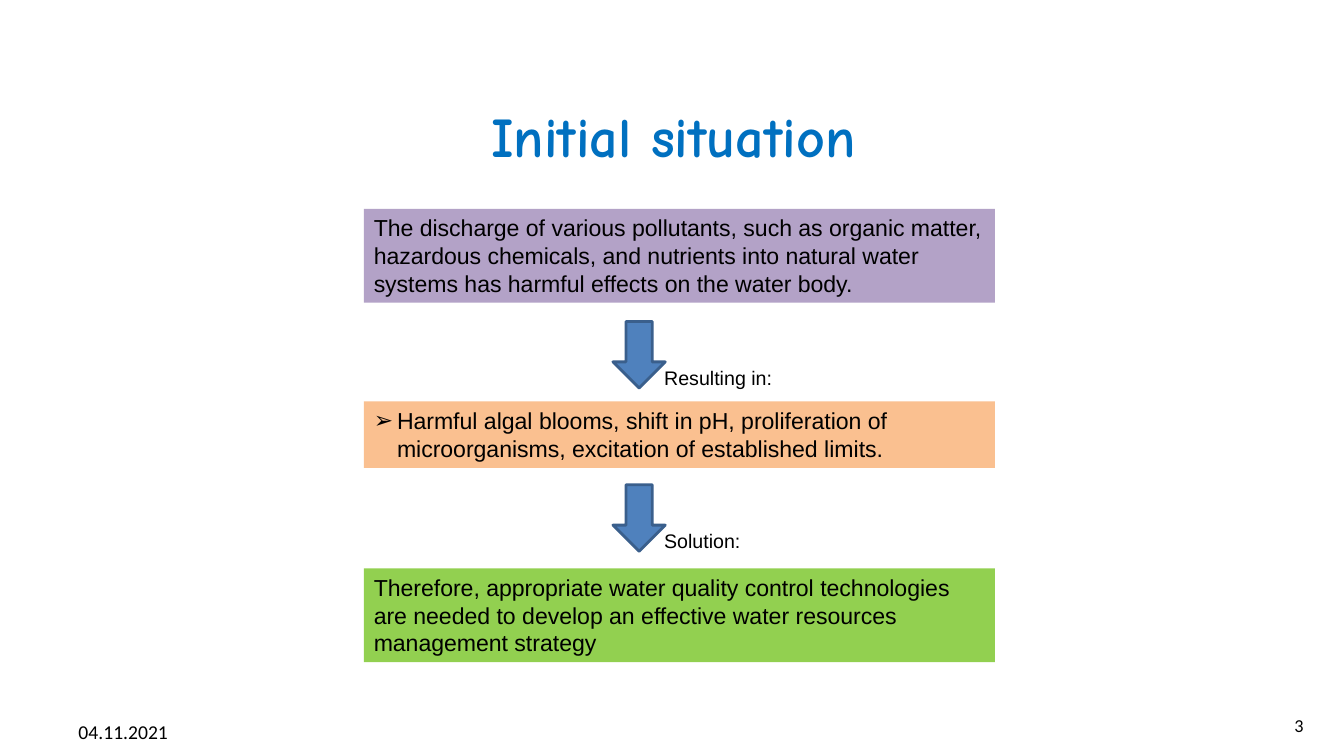
from dataclasses import dataclass

from lxml import etree
from pptx import Presentation
from pptx import util as u
from pptx.dml.color import RGBColor
from pptx.enum import shapes, text
from pptx.oxml import ns


@dataclass(frozen=True)
class Theme:
    black: str = "000000"
    title_blue: str = "0070C0"
    purple: str = "B3A2C7"
    orange: str = "FAC090"
    green: str = "92D050"
    arrow_fill: str = "4F81BD"
    arrow_line: str = "3A5F8C"
    title_size: float = 40
    body_size: float = 16.5
    label_size: float = 14
    number_size: float = 13
    body_font: str = "Arial"
    title_font: str = "Comic Neue"
    footer_font: str = "Calibri"


THEME = Theme()
BOX_LEFT, BOX_WIDTH = 259.9, 450.7
ARROW_LEFT, ARROW_WIDTH, ARROW_HEIGHT = 437.8, 37.4, 47.5
LABEL_LEFT, LABEL_DROP, LABEL_HEIGHT = 467.3, 28.1, 24.5
FOOTER_TOP, FOOTER_HEIGHT = 506.9, 25.9
BULLET_INDENT = 16.6


def points(*lengths):
    return [u.Pt(length) for length in lengths]


def write(shape, content, size, font, color=THEME.black, bold=False,
          align=text.PP_ALIGN.LEFT, anchor=text.MSO_ANCHOR.TOP, wrap=True):
    frame = shape.text_frame
    frame.word_wrap = wrap
    frame.vertical_anchor = anchor
    para = frame.paragraphs[0]
    para.alignment = align
    span = para.add_run()
    span.text = content
    span.font.size = u.Pt(size)
    span.font.name = font
    span.font.bold = bold
    span.font.color.rgb = RGBColor.from_string(color)
    return para


def add_label(page, place, content, size, font, **style):
    box = page.shapes.add_textbox(*points(*place))
    write(box, content, size, font, **style)
    return box


def add_bullet(para, symbol):
    properties = para._p.get_or_add_pPr()
    properties.set("marL", str(u.Pt(BULLET_INDENT)))
    properties.set("indent", str(-u.Pt(BULLET_INDENT)))
    color = etree.SubElement(properties, ns.qn("a:buClr"))
    etree.SubElement(color, ns.qn("a:srgbClr"), val=THEME.black)
    etree.SubElement(properties, ns.qn("a:buFont"), typeface=THEME.body_font)
    etree.SubElement(properties, ns.qn("a:buChar"), char=symbol)


def add_filled(page, kind, place, fill):
    shape = page.shapes.add_shape(kind, *points(*place))
    shape.shadow.inherit = False
    shape.fill.solid()
    shape.fill.fore_color.rgb = RGBColor.from_string(fill)
    shape.line.fill.background()
    return shape


def add_statement(page, top, height, fill, content, bullet=None):
    box = add_filled(page, shapes.MSO_SHAPE.RECTANGLE,
                     (BOX_LEFT, top, BOX_WIDTH, height), fill)
    para = write(box, content, THEME.body_size, THEME.body_font)
    if bullet:
        add_bullet(para, bullet)


def add_step(page, top, label, label_width):
    arrow = add_filled(page, shapes.MSO_SHAPE.DOWN_ARROW,
                       (ARROW_LEFT, top, ARROW_WIDTH, ARROW_HEIGHT),
                       THEME.arrow_fill)
    arrow.line.color.rgb = RGBColor.from_string(THEME.arrow_line)
    arrow.line.width = u.Pt(2)
    add_label(page, (LABEL_LEFT, top + LABEL_DROP, label_width, LABEL_HEIGHT),
              label, THEME.label_size, THEME.body_font, wrap=False)


def main():
    deck = Presentation()
    deck.slide_width, deck.slide_height = points(960, 540)
    page = deck.slides.add_slide(deck.slide_layouts[6])

    date = add_label(page, (49, FOOTER_TOP, 118.1, FOOTER_HEIGHT),
                     "04.11.2021", THEME.label_size, THEME.footer_font)
    date.text_frame.margin_top = date.text_frame.margin_bottom = u.Pt(7.2)
    add_label(page, (49, 71.3, 864, 51.1), "Initial situation",
              THEME.title_size, THEME.title_font, color=THEME.title_blue,
              bold=True, align=text.PP_ALIGN.CENTER,
              anchor=text.MSO_ANCHOR.MIDDLE)
    add_label(page, (880.6, FOOTER_TOP, 57.6, FOOTER_HEIGHT), "3",
              THEME.number_size, THEME.footer_font,
              align=text.PP_ALIGN.RIGHT)

    add_statement(page, 149.2, 67, THEME.purple,
                  "The discharge of various pollutants, such as organic "
                  "matter, hazardous chemicals, and nutrients into natural "
                  "water systems has harmful effects on the water body.")
    add_statement(page, 286.7, 47.5, THEME.orange,
                  "Harmful algal blooms, shift in pH, proliferation of "
                  "microorganisms, excitation of established limits.",
                  bullet="➢")
    add_statement(page, 406, 67, THEME.green,
                  "Therefore, appropriate water quality control technologies "
                  "are needed to develop an effective water resources "
                  "management strategy")
    add_step(page, 229.7, "Resulting in:", 92.2)
    add_step(page, 346.3, "Solution:", 69.1)

    deck.save("out.pptx")


if __name__ == "__main__":
    main()
